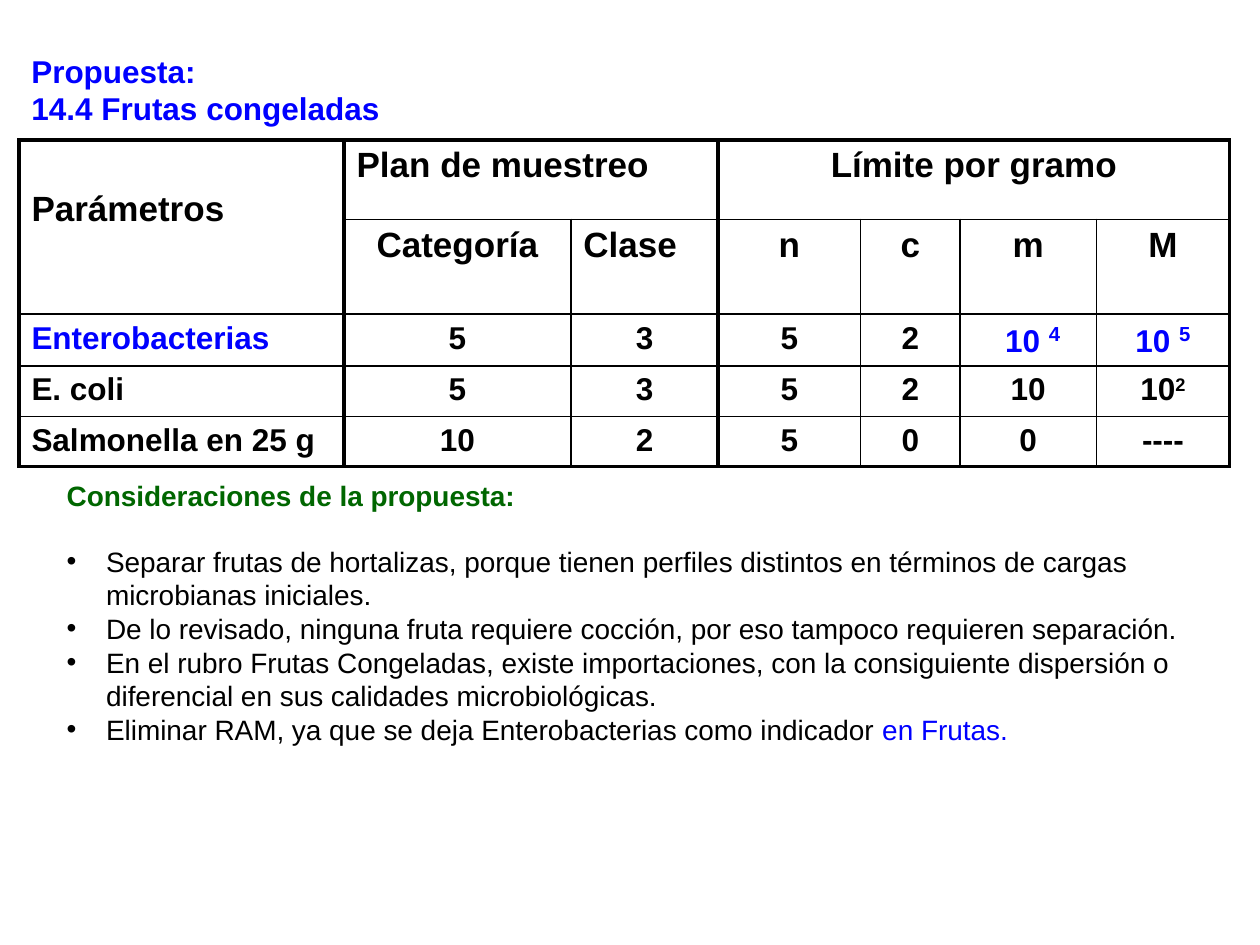
from dataclasses import dataclass

from lxml import etree
from pptx import Presentation
from pptx.dml.color import RGBColor
from pptx.enum import text
from pptx.oxml import ns
from pptx.util import Pt


@dataclass(frozen=True)
class Theme:
    """Colours, type sizes and line widths of the slide."""
    font: str = "Arial"
    black: str = "000000"
    blue: str = "0000FF"
    green: str = "006600"
    header: float = 20
    body: float = 18
    notes: float = 16
    thick: float = 2.25
    thin: float = 1


THEME = Theme()
LEFT, CENTER = text.PP_ALIGN.LEFT, text.PP_ALIGN.CENTER
COLUMNS = [185.8, 129.6, 84.2, 81.4, 56.9, 77.8, 76.3]
ROWS = [45.4, 31, 28.8, 28.8, 28.8]
THICK_COLUMN_EDGES = {0, 1, 3, len(COLUMNS)}
THICK_ROW_EDGES = {0, len(ROWS)}
HEADINGS = [
    (0, 0, 2, 1, "Parámetros", LEFT),
    (0, 1, 1, 2, "Plan de muestreo", LEFT),
    (0, 3, 1, 4, "Límite por gramo", CENTER),
    (1, 1, 1, 1, "Categoría", CENTER),
    (1, 2, 1, 1, "Clase", LEFT),
    (1, 3, 1, 1, "n", CENTER),
    (1, 4, 1, 1, "c", CENTER),
    (1, 5, 1, 1, "m", CENTER),
    (1, 6, 1, 1, "M", CENTER),
]
LIMITS = [
    ["Enterobacterias", "5", "3", "5", "2", (" 10 ", "4", THEME.header), ("10 ", "5", THEME.header)],
    ["E. coli", "5", "3", "5", "2", "10", ("10", "2", THEME.body)],
    ["Salmonella en 25 g", "10", "2", "5", "0", "0", "----"],
]
REASONS = [
    "Separar frutas de hortalizas, porque tienen perfiles distintos en términos de cargas "
    "microbianas iniciales.",
    "De lo revisado, ninguna fruta requiere cocción, por eso tampoco requieren separación.",
    "En el rubro Frutas Congeladas, existe importaciones, con la consiguiente dispersión o "
    "diferencial en sus calidades microbiológicas.",
    "Eliminar RAM, ya que se deja Enterobacterias como indicador ",
]


def apply_format(target, values):
    """Set each named attribute on the target."""
    for name, value in values.items():
        setattr(target, name, value)


def add_span(para, words, size, color=THEME.black, bold=True, raised=False):
    """Add a run of formatted text to a paragraph."""
    span = para.add_run()
    span.text = words
    apply_format(span.font, {"name": THEME.font, "size": Pt(size), "bold": bold})
    span.font.color.rgb = RGBColor.from_string(color)
    if raised:
        span.font._element.set("baseline", "30000")


def add_box(page, left, top, width, height):
    """Add a wrapping text box and return its frame."""
    frame = page.shapes.add_textbox(Pt(left), Pt(top), Pt(width), Pt(height)).text_frame
    apply_format(frame, {"word_wrap": True, "auto_size": text.MSO_AUTO_SIZE.SHAPE_TO_FIT_TEXT})
    return frame


def add_bullet(para, indent):
    """Give a paragraph a hanging round bullet."""
    props = para._p.get_or_add_pPr()
    props.set("marL", str(Pt(indent)))
    props.set("indent", str(-Pt(indent)))
    etree.SubElement(props, ns.qn("a:buFont"), typeface=THEME.font)
    etree.SubElement(props, ns.qn("a:buChar"), char="•")


def draw_borders(cell, row, column, height=1, width=1):
    """Rule the four sides of a cell, thick along the group edges."""
    props = cell._tc.get_or_add_tcPr()
    sides = {
        "lnL": column in THICK_COLUMN_EDGES,
        "lnR": column + width in THICK_COLUMN_EDGES,
        "lnT": row in THICK_ROW_EDGES,
        "lnB": row + height in THICK_ROW_EDGES,
    }
    for side, is_thick in sides.items():
        weight = THEME.thick if is_thick else THEME.thin
        line = etree.SubElement(props, ns.qn(f"a:{side}"), w=str(Pt(weight)))
        fill = etree.SubElement(line, ns.qn("a:solidFill"))
        etree.SubElement(fill, ns.qn("a:srgbClr"), val=THEME.black)
    cell.fill.background()


def add_headings(table):
    """Fill the two merged heading rows."""
    for row, column, height, width, words, align in HEADINGS:
        cell = table.cell(row, column)
        if height * width > 1:
            cell.merge(table.cell(row + height - 1, column + width - 1))
        if height > 1:
            cell.margin_top = Pt(28.3)
        draw_borders(cell, row, column, height, width)
        para = cell.text_frame.paragraphs[0]
        para.alignment = align
        add_span(para, words, THEME.header)


def add_limits(table):
    """Fill one row for each microbiological parameter."""
    for row, values in enumerate(LIMITS, start=2):
        for column, value in enumerate(values):
            cell = table.cell(row, column)
            draw_borders(cell, row, column)
            para = cell.text_frame.paragraphs[0]
            para.alignment = CENTER if column else LEFT
            is_new = row == 2 and column in (0, 5, 6)
            color = THEME.blue if is_new else THEME.black
            if isinstance(value, tuple):
                base, power, size = value
                add_span(para, base, THEME.body, color)
                add_span(para, power, size, color, raised=True)
            else:
                add_span(para, value, THEME.body, color)


def add_limit_table(page):
    """Add the table of sampling plans and limits."""
    table = page.shapes.add_table(
        len(ROWS), len(COLUMNS), Pt(10.8), Pt(79.9), Pt(sum(COLUMNS)), Pt(sum(ROWS))).table
    apply_format(table, {"first_row": False, "horz_banding": False})
    for column, width in zip(table.columns, COLUMNS):
        column.width = Pt(width)
    for row, height in zip(table.rows, ROWS):
        row.height = Pt(height)
    add_headings(table)
    add_limits(table)


def add_title(page):
    """Add the two title lines."""
    frame = add_box(page, 10.8, 25.9, 697.7, 51.1)
    for para, words in zip((frame.paragraphs[0], frame.add_paragraph()),
                           ("Propuesta:", "14.4 Frutas congeladas")):
        para.alignment = text.PP_ALIGN.JUSTIFY
        add_span(para, words, THEME.body, THEME.blue)


def add_reasons(page):
    """Add the heading and bullets that support the proposal."""
    frame = add_box(page, 31, 270, 658, 162.7)
    para = frame.paragraphs[0]
    para.space_after = Pt(18.4)
    add_span(para, "Consideraciones de la propuesta:", THEME.notes, THEME.green)
    for reason in REASONS:
        para = frame.add_paragraph()
        add_bullet(para, 22.5)
        add_span(para, reason, THEME.notes, bold=False)
    add_span(para, "en Frutas.", THEME.notes, THEME.blue, bold=False)


def main():
    """Build the slide and save the deck."""
    deck = Presentation()
    apply_format(deck, {"slide_width": Pt(720), "slide_height": Pt(540)})
    page = deck.slides.add_slide(deck.slide_layouts[6])
    add_limit_table(page)
    add_title(page)
    add_reasons(page)
    deck.save("out.pptx")


if __name__ == "__main__":
    main()
